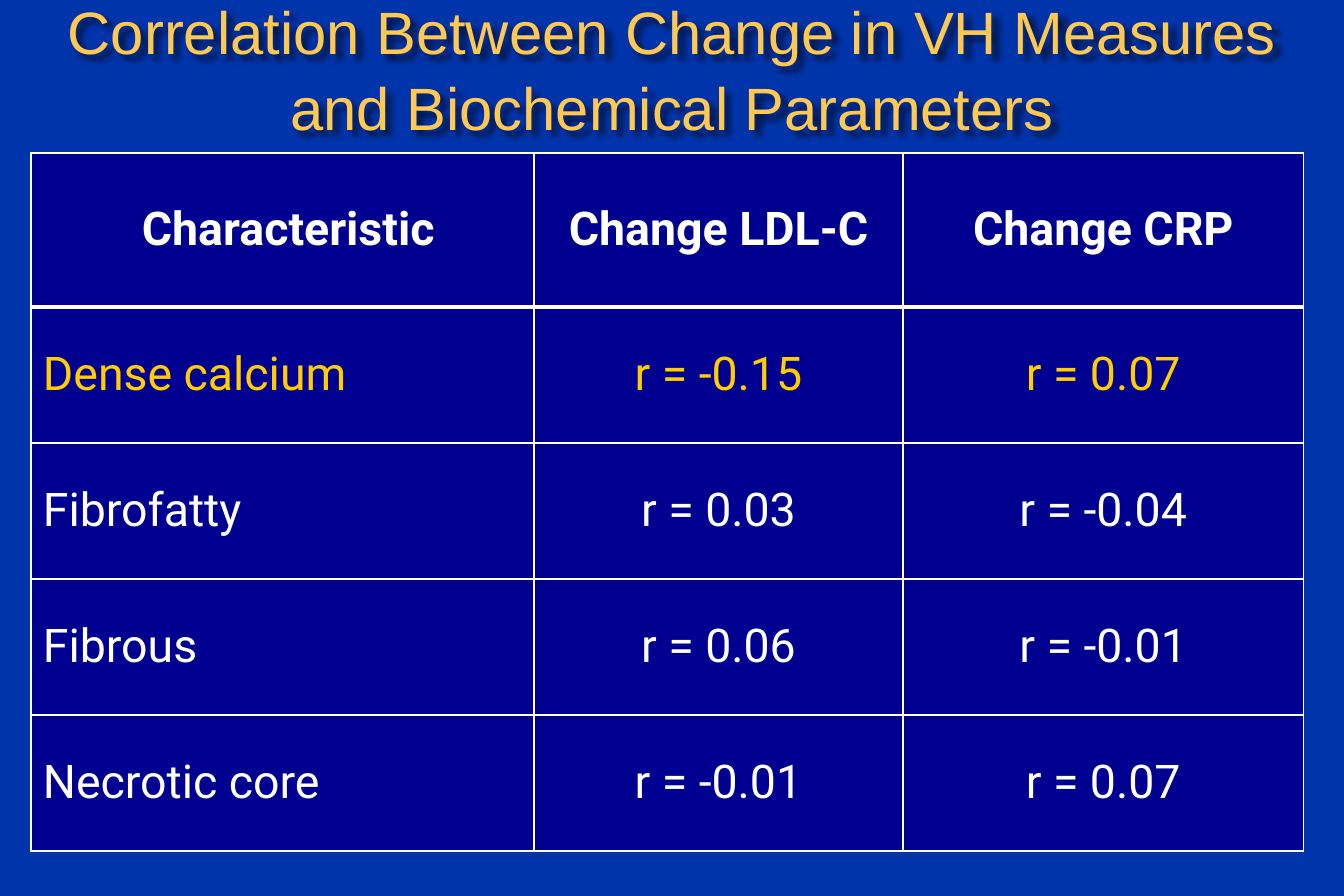
from lxml import etree
from pptx import Presentation
from pptx import util as u
from pptx.dml.color import RGBColor
from pptx.enum import text
from pptx.oxml import ns

COLORS = {
    "background": "0034AA",
    "title": "FFC850",
    "cell": "000090",
    "text": "FFFFFF",
    "highlight": "FFCD02",
    "shadow": "000000",
}
HEADER = [" Characteristic", "Change LDL-C", "Change CRP"]
CORRELATIONS = [
    ("Dense calcium", -0.15, 0.07),
    ("Fibrofatty", 0.03, -0.04),
    ("Fibrous", 0.06, -0.01),
    ("Necrotic core", -0.01, 0.07),
]
COLUMN_WIDTHS = [10.69, 7.85, 8.51]
HEADER_HEIGHT, ROW_HEIGHT = 3.28, 2.89


def color(name):
    return RGBColor.from_string(COLORS[name])


def add_child(parent, tag, **attributes):
    child = etree.SubElement(parent, ns.qn(tag))
    for key, value in attributes.items():
        child.set(key, str(value))
    return child


def write(frame, words, *, font, size, fill, bold=False, align=text.PP_ALIGN.CENTER, spacing=1.0):
    para = frame.paragraphs[0]
    para.alignment = align
    para.line_spacing = spacing
    span = para.add_run()
    span.text = words
    span.font.name = font
    span.font.size = u.Pt(size)
    span.font.bold = bold
    span.font.color.rgb = color(fill)


def add_shadow(box):
    effects = add_child(box._element.spPr, "a:effectLst")
    shadow = add_child(effects, "a:outerShdw", blurRad=u.Pt(4), dist=u.Pt(4),
                       dir=2700000, algn="tl", rotWithShape=0)
    shade = add_child(shadow, "a:srgbClr", val=COLORS["shadow"])
    add_child(shade, "a:alpha", val=60000)


def add_title(page, words):
    box = page.shapes.title
    box.left, box.top, box.width, box.height = u.Cm(0), u.Cm(0.66), u.Cm(28.58), u.Cm(1.52)
    frame = box.text_frame
    frame.word_wrap = True
    frame.auto_size = text.MSO_AUTO_SIZE.NONE
    frame.vertical_anchor = text.MSO_ANCHOR.MIDDLE
    frame.margin_left = frame.margin_right = u.Cm(0.3)
    frame.margin_top = frame.margin_bottom = u.Cm(0.13)
    write(frame, words, font="Arial", size=36, fill="title", spacing=1.05)
    add_shadow(box)


def set_borders(cell, top, bottom):
    properties = cell._tc.get_or_add_tcPr()
    widths = {"a:lnL": 1, "a:lnR": 1, "a:lnT": top, "a:lnB": bottom}
    for position, (side, width) in enumerate(widths.items()):
        line = add_child(properties, side, w=u.Pt(width))
        add_child(add_child(line, "a:solidFill"), "a:srgbClr", val=COLORS["text"])
        properties.insert(position, line)


def fill_cell(cell, words, row, column):
    cell.fill.solid()
    cell.fill.fore_color.rgb = color("cell")
    cell.vertical_anchor = text.MSO_ANCHOR.MIDDLE
    is_label = row > 0 and column == 0
    write(cell.text_frame, words, font="Roboto", size=28, bold=row == 0,
          fill="highlight" if row == 1 else "text",
          align=text.PP_ALIGN.LEFT if is_label else text.PP_ALIGN.CENTER)
    # The thick rule separates the header from the body
    set_borders(cell, top=3 if row == 1 else 1, bottom=3 if row == 0 else 1)


def add_correlation_table(page):
    rows = [HEADER] + [[label, f"r = {ldl:.2f}", f"r = {crp:.2f}"]
                       for label, ldl, crp in CORRELATIONS]
    heights = [HEADER_HEIGHT] + [ROW_HEIGHT] * len(CORRELATIONS)
    table = page.shapes.add_table(len(rows), len(HEADER), u.Cm(0.66), u.Cm(3.25),
                                  u.Cm(sum(COLUMN_WIDTHS)), u.Cm(sum(heights))).table
    for column, width in zip(table.columns, COLUMN_WIDTHS):
        column.width = u.Cm(width)
    for row, height in zip(table.rows, heights):
        row.height = u.Cm(height)
    for r, row in enumerate(rows):
        for c, words in enumerate(row):
            fill_cell(table.cell(r, c), words, r, c)


def main():
    deck = Presentation()
    deck.slide_width, deck.slide_height = u.Cm(28.575), u.Cm(19.05)
    page = deck.slides.add_slide(deck.slide_layouts.get_by_name("Title Only"))

    # Background
    page.background.fill.solid()
    page.background.fill.fore_color.rgb = color("background")

    # Title and table
    add_title(page, "Correlation Between Change in VH Measures and Biochemical Parameters")
    add_correlation_table(page)
    deck.save("out.pptx")


if __name__ == "__main__":
    main()
